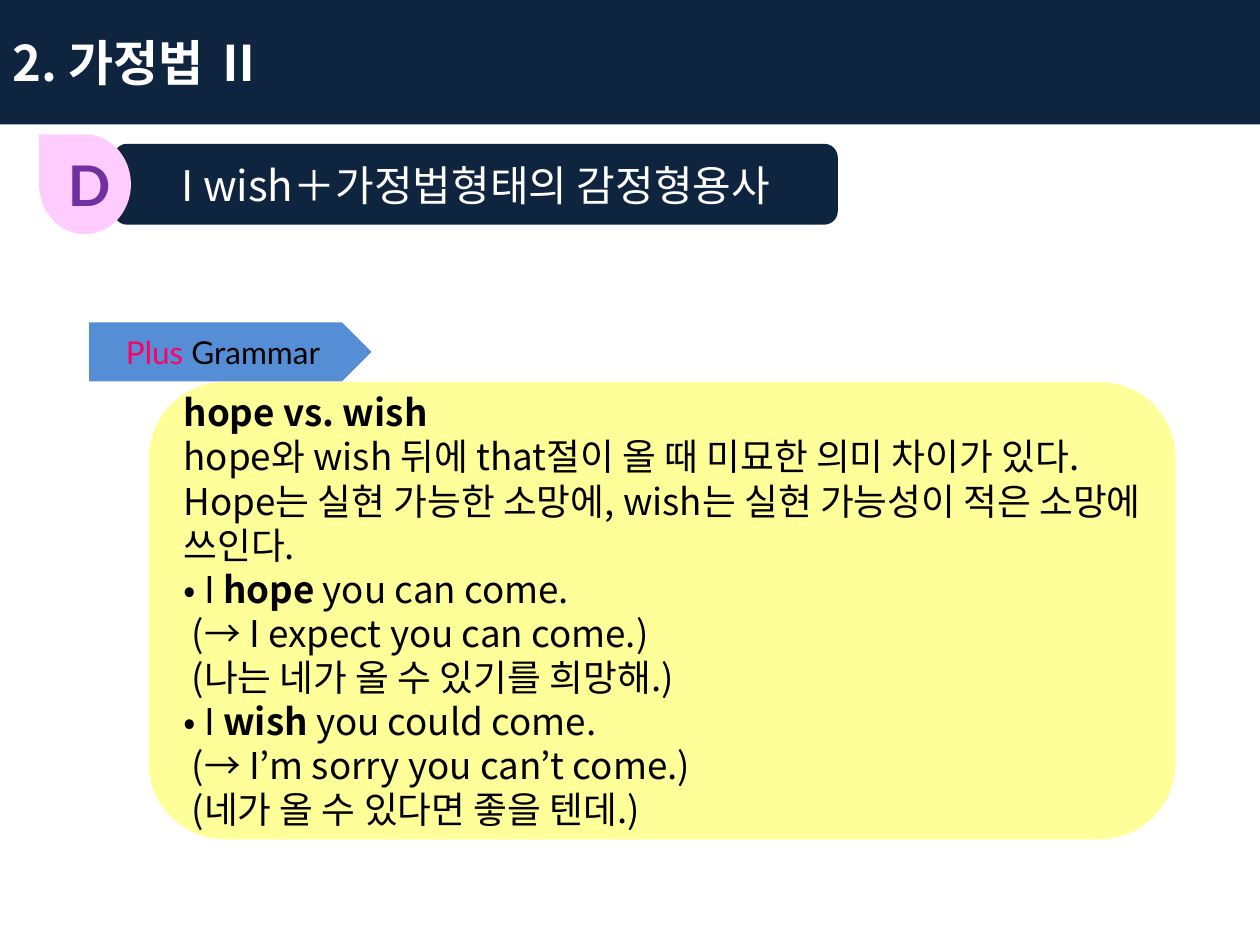
from lxml import etree
from pptx import Presentation
from pptx import util as u
from pptx.dml.color import RGBColor
from pptx.enum import shapes, text
from pptx.oxml.ns import qn

SHAPE = shapes.MSO_SHAPE
ALIGN = text.PP_ALIGN
KOREAN = "Noto Sans CJK KR"
LATIN = "Lato"
NAVY, WHITE, BLACK = "0F243E", "FFFFFF", "000000"


def color(value):
    return RGBColor.from_string(value)


class GrammarSlide:
    def __init__(self, deck):
        self.slide = deck.slides.add_slide(deck.slide_layouts[5])

    def fill(self, shape, value):
        shape.fill.solid()
        shape.fill.fore_color.rgb = color(value)
        shape.line.fill.background()

    def place(self, shape, box):
        shape.left, shape.top, shape.width, shape.height = (u.Cm(n) for n in box)

    def set_text(self, shape, lines, size, font=KOREAN, tint=BLACK, bold=False,
                 align=ALIGN.LEFT, wrap=True):
        frame = shape.text_frame
        frame.auto_size = text.MSO_AUTO_SIZE.NONE
        frame.word_wrap = wrap
        frame.vertical_anchor = text.MSO_ANCHOR.MIDDLE
        for index, line in enumerate(lines):
            paragraph = frame.add_paragraph() if index else frame.paragraphs[0]
            paragraph.alignment = align
            paragraph.font.size = u.Pt(size)
            paragraph.font.bold = bold
            paragraph.font.color.rgb = color(tint)
            paragraph.font.name = font
            defaults = paragraph._p.get_or_add_pPr().find(qn("a:defRPr"))
            etree.SubElement(defaults, qn("a:ea")).set("typeface", font)
            for words, *style in line:
                run = paragraph.add_run()
                run.text = words
                if "bold" in style:
                    run.font.bold = True
                elif style:
                    run.font.color.rgb = color(style[0])

    def title(self, box, fill, lines, size, **style):
        banner = self.slide.shapes.title
        self.place(banner, box)
        self.fill(banner, fill)
        self.set_text(banner, lines, size, **style)

    def panel(self, kind, box, fill, lines=(), size=18, rotation=0, **style):
        panel = self.slide.shapes.add_shape(kind, *(u.Cm(n) for n in box))
        panel.shadow.inherit = False
        panel.rotation = rotation
        self.fill(panel, fill)
        self.set_text(panel, lines, size, **style)

    def label(self, box, lines, size, **style):
        label = self.slide.shapes.add_textbox(*(u.Cm(n) for n in box))
        self.set_text(label, lines, size, wrap=False, **style)


def main():
    deck = Presentation()
    deck.slide_width, deck.slide_height = u.Cm(25.4), u.Cm(19.05)
    page = GrammarSlide(deck)

    page.title((0, 0, 25.4, 2.51), NAVY, [[("2. ", "FCFCFD"), ("가정법 Ⅱ",)]],
               28, tint=WHITE, bold=True)
    page.panel(SHAPE.FLOWCHART_ALTERNATE_PROCESS, (2.29, 2.9, 14.6, 1.63), NAVY,
               [[("I wish＋가정법형태의 감정형용사",)]], 24,
               tint=WHITE, align=ALIGN.CENTER)
    page.panel(SHAPE.TEAR, (0.71, 2.79, 2.01, 1.85), "FFCCFF", rotation=270)
    page.label((1.12, 2.9, 1.19, 1.63), [[("D",)]], 32,
               font=LATIN, tint="7030A0", bold=True)

    explanation = [
        [("hope vs. wish", "bold")],
        [("hope와 wish 뒤에 that절이 올 때 미묘한 의미 차이가 있다. "
          "Hope는 실현 가능한 소망에, wish는 실현 가능성이 적은 소망에 쓰인다.",)],
    ]
    examples = [
        ("hope", " you can come.", "I expect you can come.",
         "나는 네가 올 수 있기를 희망해."),
        ("wish", " you could come.", "I’m sorry you can’t come.",
         "네가 올 수 있다면 좋을 텐데."),
    ]
    for verb, ending, meaning, translation in examples:
        explanation += [
            [("• I ",), (verb, "bold"), (ending,)],
            [(f" (→ {meaning})",)],
            [(f" ({translation})",)],
        ]
    page.panel(SHAPE.FLOWCHART_ALTERNATE_PROCESS, (3, 7.7, 20.7, 9.22), "FFFF99",
               explanation, 21)
    page.panel(SHAPE.PENTAGON, (1.8, 6.5, 5.69, 1.19), "558ED5",
               [[("Plus ", "FF0066"), ("Grammar",)]], 18,
               font=LATIN, align=ALIGN.CENTER)

    deck.save("out.pptx")


if __name__ == "__main__":
    main()
